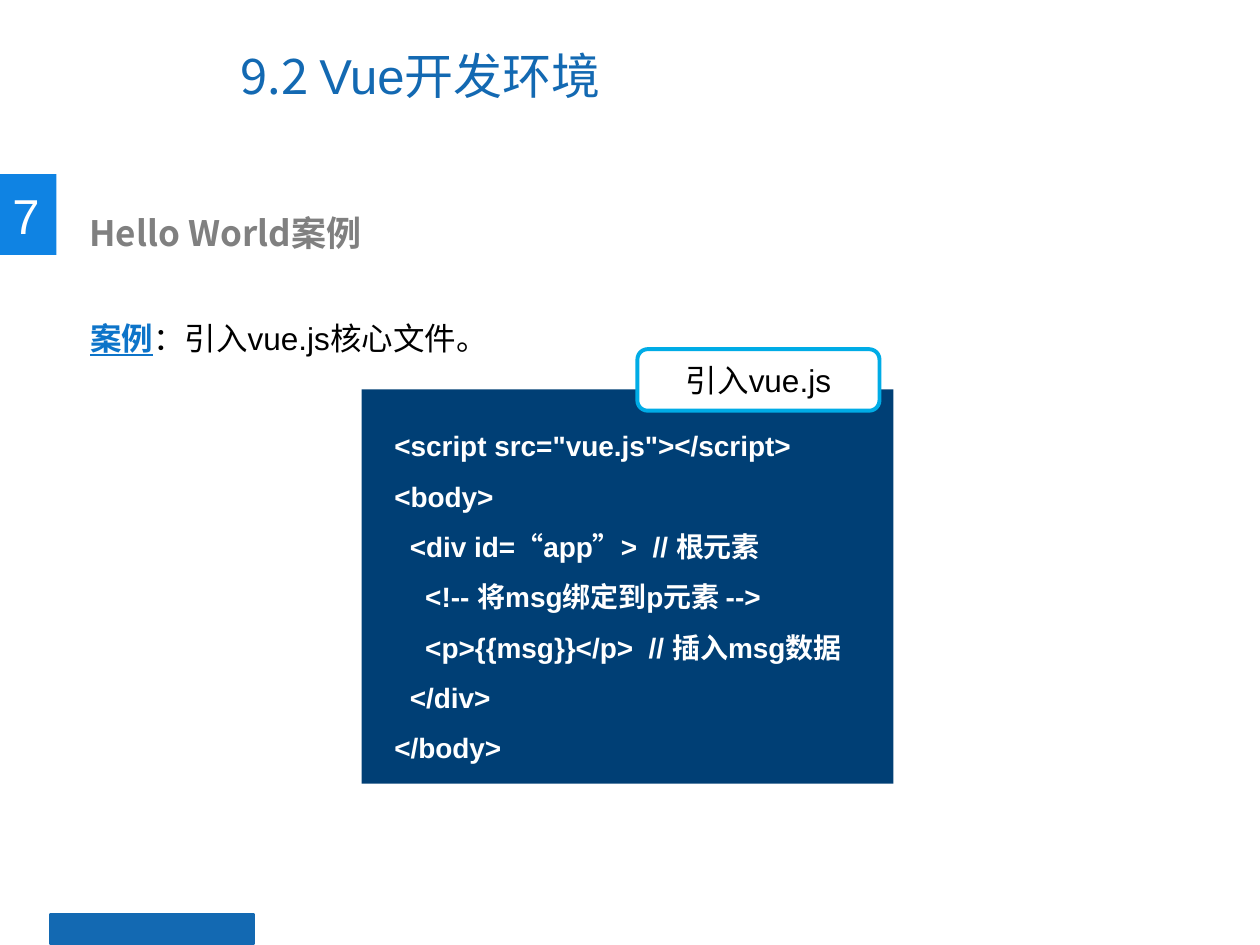
"""Build the Vue development environment slide with its Hello World example."""
from dataclasses import dataclass
from typing import Optional

from pptx import Presentation
from pptx.dml.color import RGBColor
from pptx.enum.shapes import MSO_SHAPE as Preset
from pptx.enum.text import MSO_ANCHOR as Anchor, PP_ALIGN as Align
from pptx.oxml.ns import qn
from pptx.util import Cm, Pt

LATIN = "Arial"
CJK = "Noto Sans CJK SC"
WHITE = RGBColor(0xFF, 0xFF, 0xFF)
BLACK = RGBColor(0x00, 0x00, 0x00)
GRAY = RGBColor(0x80, 0x80, 0x80)
BLUE = RGBColor(0x13, 0x69, 0xB2)
BADGE_BLUE = RGBColor(0x0F, 0x83, 0xE3)
LINK_BLUE = RGBColor(0x0D, 0x74, 0xC9)
NAVY = RGBColor(0x00, 0x3F, 0x75)
CYAN = RGBColor(0x00, 0xAC, 0xE6)

CODE = """<script src="vue.js"></script>
<body>
  <div id=“app”>  // 根元素
    <!-- 将msg绑定到p元素 -->
    <p>{{msg}}</p>  // 插入msg数据
  </div>
</body>"""


@dataclass(frozen=True)
class Area:
    left: float
    top: float
    width: float
    height: float

    def lengths(self) -> tuple:
        return Cm(self.left), Cm(self.top), Cm(self.width), Cm(self.height)


@dataclass(frozen=True)
class Style:
    size: int
    color: RGBColor
    latin: str = LATIN
    bold: bool = False
    underline: bool = False


@dataclass(frozen=True)
class Block:
    area: Area
    pieces: tuple
    spacing: float = 1.0
    anchor: Anchor = Anchor.TOP
    wrap: bool = True


@dataclass(frozen=True)
class Panel:
    area: Area
    fill: RGBColor
    outline: Optional[RGBColor] = None
    preset: Preset = Preset.RECTANGLE


def style_run(run, style: Style) -> None:
    font = run.font
    font.size, font.name = Pt(style.size), style.latin
    font.bold, font.underline = style.bold, style.underline
    font.color.rgb = style.color
    east_asian = run._r.get_or_add_rPr().makeelement(qn("a:ea"), {"typeface": CJK})
    font._rPr.find(qn("a:latin")).addnext(east_asian)


def add_panel(slide, panel: Panel):
    shape = slide.shapes.add_shape(panel.preset, *panel.area.lengths())
    shape.shadow.inherit = False
    shape.fill.solid()
    shape.fill.fore_color.rgb = panel.fill
    if panel.outline is None:
        shape.line.fill.background()
    else:
        shape.line.color.rgb = panel.outline
        shape.line.width = Pt(2.25)
    return shape


def add_block(slide, block: Block) -> None:
    frame = slide.shapes.add_textbox(*block.area.lengths()).text_frame
    frame.word_wrap = block.wrap
    frame.vertical_anchor = block.anchor
    (first_text, first_style), *others = block.pieces
    frame.text = first_text
    for paragraph in frame.paragraphs:
        paragraph.line_spacing = block.spacing
        for run in paragraph.runs:
            style_run(run, first_style)
    for text, style in others:
        run = frame.paragraphs[-1].add_run()
        run.text = text
        style_run(run, style)


def main() -> None:
    deck = Presentation()
    deck.slide_width, deck.slide_height = Cm(25.4), Cm(19.05)
    slide = deck.slides.add_slide(deck.slide_layouts[6])

    title_cjk, title_latin = Style(28, BLUE, CJK), Style(28, BLUE)
    for panel in (
        Panel(Area(1.02, 18.44, 4.09, 0.58), BLUE, BLUE),
        Panel(Area(0, 3.51, 1.14, 1.63), BADGE_BLUE),
        Panel(Area(7.29, 7.85, 10.72, 7.95), NAVY),
    ):
        add_panel(slide, panel)

    for block in (
        Block(
            Area(4.6, 0.43, 13.11, 2.16),
            (("9.2 ", title_cjk), ("Vue", title_latin), ("开发环境", title_cjk)),
            anchor=Anchor.MIDDLE,
        ),
        Block(Area(0, 3.61, 1.07, 1.45), (("7", Style(28, WHITE)),), wrap=False),
        Block(
            Area(1.55, 4.14, 12.7, 1.12),
            (("Hello World案例", Style(20, GRAY, CJK, bold=True)),),
        ),
        Block(
            Area(1.57, 5.54, 21.97, 1.8),
            (
                ("案例", Style(18, LINK_BLUE, bold=True, underline=True)),
                ("：引入vue.js核心文件。", Style(18, BLACK)),
            ),
            spacing=2.0,
        ),
        Block(
            Area(7.7, 8.18, 10.31, 7.62),
            ((CODE, Style(16, WHITE, bold=True)),),
            spacing=1.5,
        ),
    ):
        add_block(slide, block)

    import_tag = add_panel(
        slide, Panel(Area(12.85, 7.04, 4.88, 1.24), WHITE, CYAN, Preset.ROUNDED_RECTANGLE)
    )
    import_tag.text_frame.text = "引入vue.js"
    import_label = import_tag.text_frame.paragraphs[0]
    import_label.alignment = Align.CENTER
    style_run(import_label.runs[0], Style(18, BLACK))

    deck.save("out.pptx")


if __name__ == "__main__":
    main()
